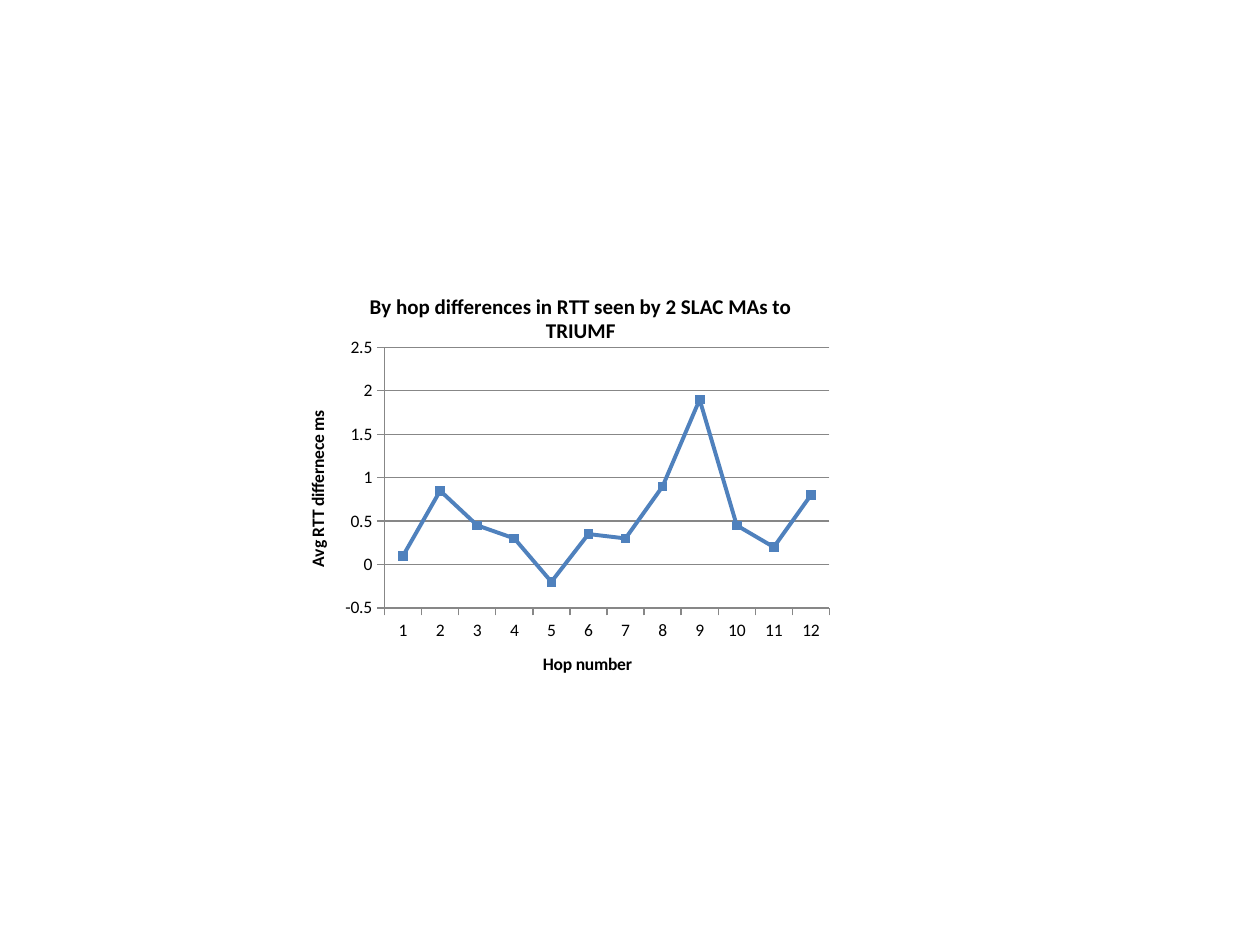
from dataclasses import dataclass

from lxml import etree
from pptx import Presentation
from pptx.chart.data import CategoryChartData
from pptx.dml.color import RGBColor
from pptx.enum.chart import (XL_AXIS_CROSSES, XL_CHART_TYPE, XL_MARKER_STYLE,
                             XL_TICK_LABEL_POSITION, XL_TICK_MARK)
from pptx.oxml.ns import qn
from pptx.util import Inches, Pt

LINE_MARKERS = XL_CHART_TYPE.LINE_MARKERS
SQUARE = XL_MARKER_STYLE.SQUARE
LOW = XL_TICK_LABEL_POSITION.LOW
OUTSIDE, NO_TICK = XL_TICK_MARK.OUTSIDE, XL_TICK_MARK.NONE
AT_MINIMUM = XL_AXIS_CROSSES.MINIMUM


@dataclass(frozen=True)
class Theme:
    font: str = "Calibri"
    text: RGBColor = RGBColor(0, 0, 0)
    series: RGBColor = RGBColor(0x4F, 0x81, 0xBD)
    rule: RGBColor = RGBColor(0x87, 0x87, 0x87)
    title_size: int = 12
    body_size: int = 10
    rule_width: float = 0.75
    series_width: float = 2.25
    marker_size: int = 5


@dataclass(frozen=True)
class AxisStyle:
    title: str
    format: dict


THEME = Theme()
PAGE_WIDTH, PAGE_HEIGHT = Inches(10), Inches(7.5)
CHART_SHARES = (0.2, 0.3, 0.476, 0.477)
PLOT_LAYOUT = {"layoutTarget": "inner", "xMode": "edge", "yMode": "edge",
               "x": 0.221, "y": 0.142, "w": 0.742, "h": 0.578}
TITLE_LAYOUT = {"xMode": "edge", "yMode": "edge", "x": 0.19, "y": 0.01}
TITLE = "By hop differences in RTT seen by 2 SLAC MAs to TRIUMF"
RTT_DIFFERENCES = (0.1, 0.85, 0.45, 0.3, -0.2, 0.35,
                   0.3, 0.9, 1.9, 0.45, 0.2, 0.8)
TICKS = {"major_tick_mark": OUTSIDE, "minor_tick_mark": NO_TICK,
         "tick_label_position": LOW}
HOP_AXIS = AxisStyle("Hop number", {**TICKS, "has_major_gridlines": False})
RTT_AXIS = AxisStyle("Avg RTT differnece ms", {
    **TICKS, "has_major_gridlines": True, "minimum_scale": -0.5,
    "maximum_scale": 2.5, "major_unit": 0.5, "crosses": AT_MINIMUM})


def set_format(target, values: dict) -> None:
    for name, value in values.items():
        setattr(target, name, value)


def style_font(font, size: int, bold: bool) -> None:
    set_format(font, {"name": THEME.font, "size": Pt(size), "bold": bold})
    font.color.rgb = THEME.text


def style_line(line, color: RGBColor, width: float) -> None:
    line.color.rgb = color
    line.width = Pt(width)


def write_title(owner, text: str, size: int) -> None:
    frame = owner.text_frame
    frame.text = text
    style_font(frame.paragraphs[0].runs[0].font, size, True)


def place(element, after: str | None, values: dict) -> None:
    """Give a chart part a manual layout, following the named child if any."""
    for old in element.findall(qn("c:layout")):
        element.remove(old)
    layout = etree.Element(qn("c:layout"))
    manual = etree.SubElement(layout, qn("c:manualLayout"))
    for name, value in values.items():
        etree.SubElement(manual, qn(f"c:{name}")).set("val", str(value))
    if after:
        element.find(qn(after)).addnext(layout)
    else:
        element.insert(0, layout)


def style_axis(axis, style: AxisStyle) -> None:
    set_format(axis, style.format)
    write_title(axis.axis_title, style.title, THEME.body_size)
    style_font(axis.tick_labels.font, THEME.body_size, False)
    style_line(axis.format.line, THEME.rule, THEME.rule_width)
    if axis.has_major_gridlines:
        style_line(axis.major_gridlines.format.line, THEME.rule, THEME.rule_width)


def style_series(series) -> None:
    series.smooth = False
    style_line(series.format.line, THEME.series, THEME.series_width)
    set_format(series.marker, {"style": SQUARE, "size": THEME.marker_size})
    fill = series.marker.format.fill
    fill.solid()
    fill.fore_color.rgb = THEME.series
    style_line(series.marker.format.line, THEME.series, THEME.rule_width)


def add_hop_chart(page) -> None:
    data = CategoryChartData()
    data.categories = [str(hop + 1) for hop in range(len(RTT_DIFFERENCES))]
    data.add_series("Series 1", RTT_DIFFERENCES)
    left, top, width, height = CHART_SHARES
    chart = page.shapes.add_chart(
        LINE_MARKERS, int(left * PAGE_WIDTH), int(top * PAGE_HEIGHT),
        int(width * PAGE_WIDTH), int(height * PAGE_HEIGHT), data).chart
    chart.has_legend = False
    style_font(chart.font, THEME.body_size, False)
    write_title(chart.chart_title, TITLE, THEME.title_size)
    plot = chart.plots[0]
    plot.vary_by_categories = False
    style_series(plot.series[0])
    style_axis(chart.category_axis, HOP_AXIS)
    style_axis(chart.value_axis, RTT_AXIS)
    chart_root = chart.element.find(qn("c:chart"))
    title = chart_root.find(qn("c:title"))
    place(title, "c:tx", TITLE_LAYOUT)
    overlay = title.find(qn("c:overlay"))
    if overlay is None:
        overlay = etree.Element(qn("c:overlay"))
        title.find(qn("c:layout")).addnext(overlay)
    overlay.set("val", "1")
    place(chart_root.find(qn("c:plotArea")), None, PLOT_LAYOUT)


def main() -> None:
    deck = Presentation()
    set_format(deck, {"slide_width": PAGE_WIDTH, "slide_height": PAGE_HEIGHT})
    page = deck.slides.add_slide(deck.slide_layouts[6])
    add_hop_chart(page)
    deck.save("out.pptx")


if __name__ == "__main__":
    main()
